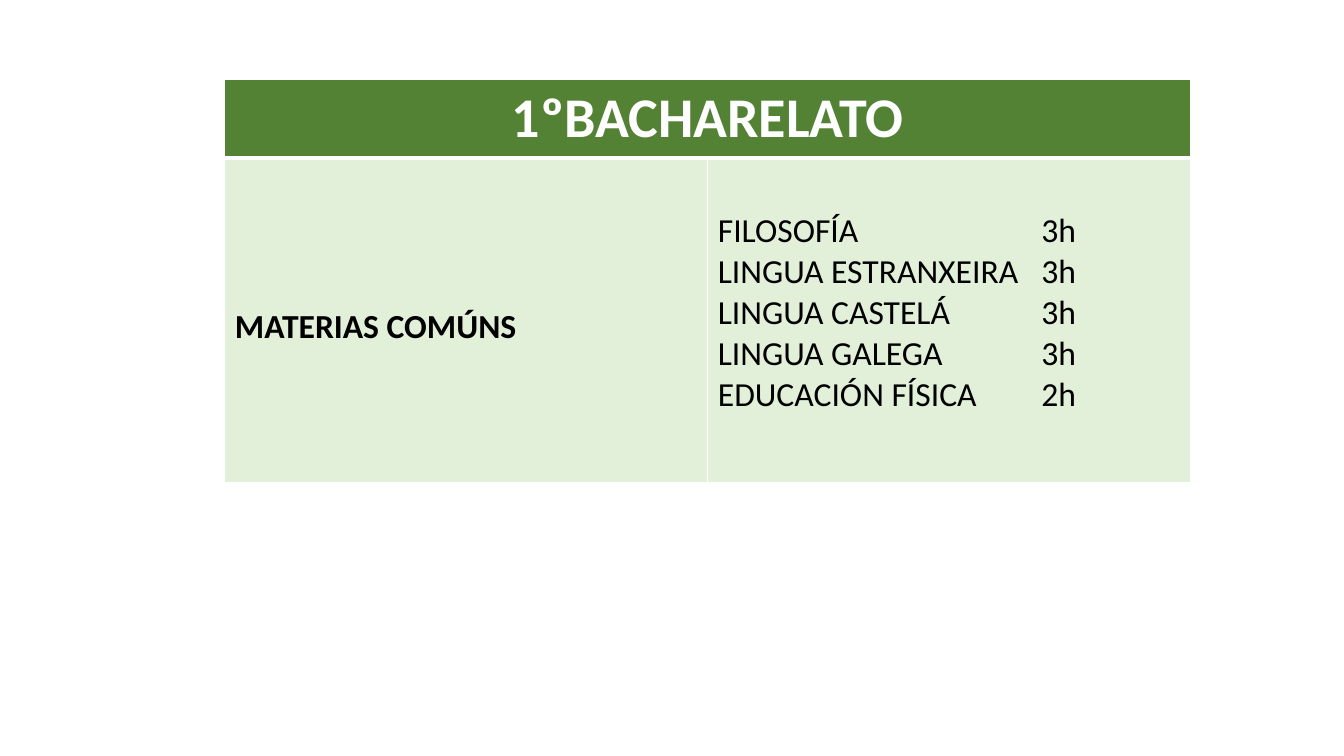
from lxml.etree import SubElement
from pptx import Presentation
from pptx.dml.color import RGBColor
from pptx.enum.text import PP_ALIGN
from pptx.oxml.ns import qn
from pptx.util import Inches, Pt

COLORS = {"header": "548235", "body": "E2F0D9", "white": "FFFFFF", "black": "000000"}
SUBJECTS = [
    ("FILOSOFÍA", "3h"),
    ("LINGUA ESTRANXEIRA", "3h"),
    ("LINGUA CASTELÁ", "3h"),
    ("LINGUA GALEGA", "3h"),
    ("EDUCACIÓN FÍSICA", "2h"),
]
HOURS_TAB = Inches(3.21)


def write(para, text, size=24, color="black", bold=False, align=PP_ALIGN.LEFT, tab=None):
    para.alignment = align
    if tab:
        stops = SubElement(para._p.get_or_add_pPr(), qn("a:tabLst"))
        SubElement(stops, qn("a:tab"), pos=str(tab), algn="l")
    span = para.add_run()
    span.text = text
    span.font.name = "Calibri"
    span.font.size = Pt(size)
    span.font.bold = bold
    span.font.color.rgb = RGBColor.from_string(COLORS[color])


def style_cell(cell, fill, bottom=1):
    # Borders must come before the fill in the cell properties
    properties = cell._tc.get_or_add_tcPr()
    for side, width in (("L", 1), ("R", 1), ("T", 1), ("B", bottom)):
        border = SubElement(properties, qn(f"a:ln{side}"), w=str(Pt(width)))
        solid = SubElement(border, qn("a:solidFill"))
        SubElement(solid, qn("a:srgbClr"), val=COLORS["white"])
    cell.fill.solid()
    cell.fill.fore_color.rgb = RGBColor.from_string(COLORS[fill])


deck = Presentation()
deck.slide_width, deck.slide_height = Inches(13.33), Inches(7.5)
page = deck.slides.add_slide(deck.slide_layouts[6])

# Table grid
table = page.shapes.add_table(
    2, 2, Inches(2.23), Inches(0.79), Inches(9.58), Inches(3.99)
).table
for column in table.columns:
    column.width = Inches(4.79)
table.rows[0].height = Inches(0.77)
table.rows[1].height = Inches(3.22)
for cell in table.rows[0].cells:
    style_cell(cell, "header", bottom=3)
for cell in table.rows[1].cells:
    style_cell(cell, "body")

# Header across both columns
header = table.cell(0, 0)
header.merge(table.cell(0, 1))
write(header.text_frame.paragraphs[0], "1ºBACHARELATO", size=40, color="white",
      bold=True, align=PP_ALIGN.CENTER)

# Group name
group = table.cell(1, 0)
group.margin_top = Inches(1.47)
write(group.text_frame.paragraphs[0], "MATERIAS COMÚNS", bold=True)

# Subjects with weekly hours
subjects = table.cell(1, 1)
subjects.margin_top = Inches(0.52)
frame = subjects.text_frame
for index, (subject, hours) in enumerate(SUBJECTS):
    para = frame.add_paragraph() if index else frame.paragraphs[0]
    write(para, f"{subject}\t{hours}", tab=HOURS_TAB)

deck.save("out.pptx")
